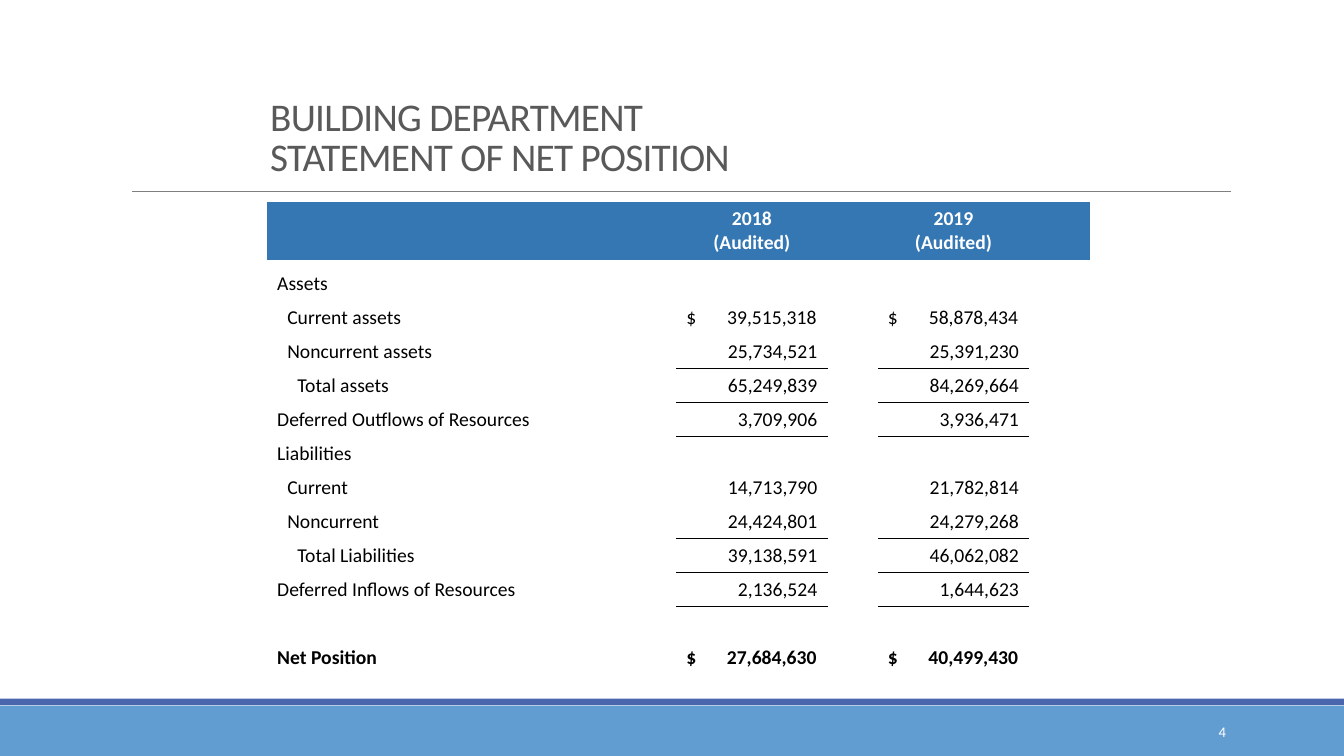
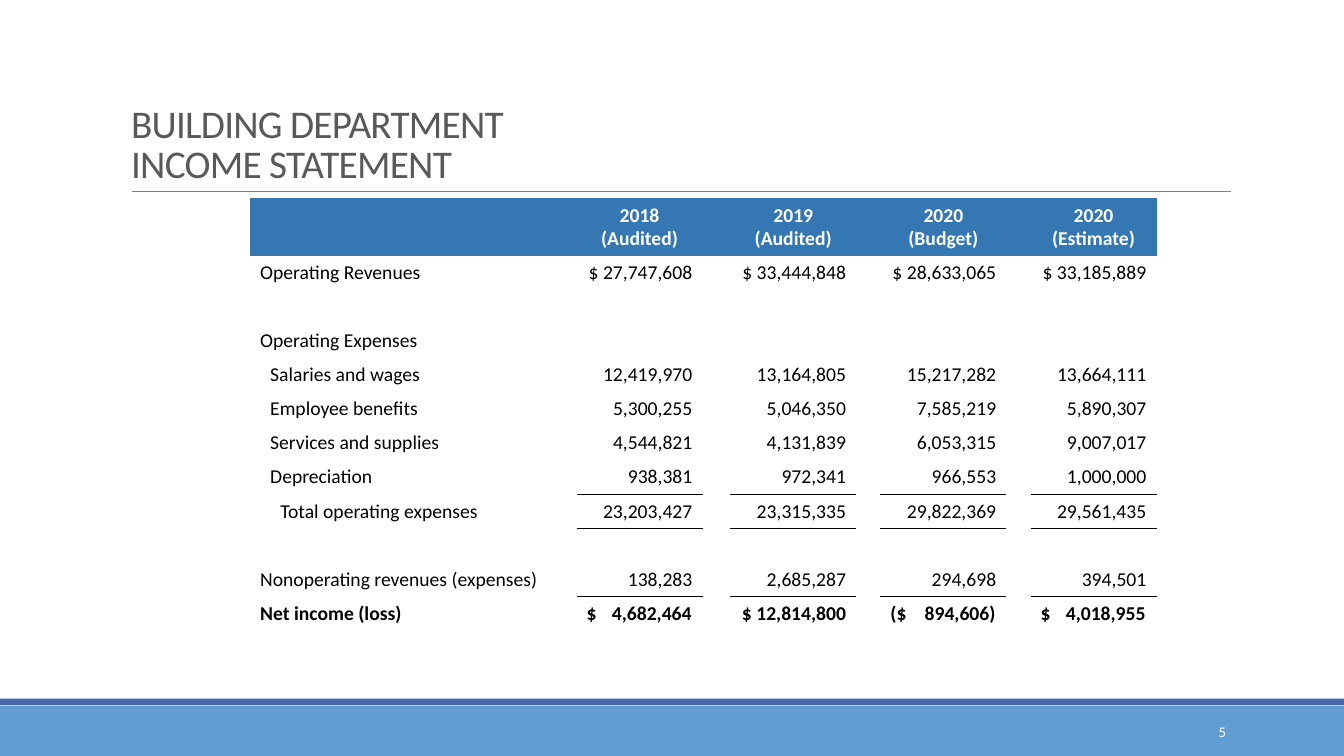
from lxml import etree
from pptx import Presentation
from pptx.dml.color import RGBColor
from pptx.enum import shapes, text
from pptx.oxml.ns import qn
from pptx.util import Pt

FONT = "Calibri"
HEAD, BLUE, STRIPE = "3477B2", "629DD1", "4A66AC"
GREY, RULE, BLACK, WHITE = "595959", "808080", "000000", "FFFFFF"
WIDE, HIGH = 960, 540
PAD = 7.2          # side margin of a table cell, also one indent step
ROW, TOP = 24.3, 41.4
PLAIN = "{2D5ABB26-0587-4C30-8999-92F81FD0307C}"  # no style, no grid

# Rows: indent level, label, values, mark ("rule" below the values, "bold" or "")
BLANK = (0, "", (), "")
SLIDES = [
    dict(
        number="4",
        title="BUILDING DEPARTMENT\vSTATEMENT OF NET POSITION",
        place=(185.8, 72, 672, 59.8),
        corner=(190.8, 144),
        cols=(202.3, 18, 72, 108, 36, 108, 43.2),
        used=(3, 5),
        filled=7,
        first=29.3,
        heads=("2018\n(Audited)", "2019\n(Audited)"),
        rows=[
            (0, "Assets", (), ""),
            (1, "Current assets", ("$\t39,515,318", "$\t58,878,434"), ""),
            (1, "Noncurrent assets", ("25,734,521", "25,391,230"), "rule"),
            (2, "Total assets", ("65,249,839", "84,269,664"), "rule"),
            (0, "Deferred Outflows of Resources", ("3,709,906", "3,936,471"), "rule"),
            (0, "Liabilities", (), ""),
            (1, "Current", ("14,713,790", "21,782,814"), ""),
            (1, "Noncurrent", ("24,424,801", "24,279,268"), "rule"),
            (2, "Total Liabilities", ("39,138,591", "46,062,082"), "rule"),
            (0, "Deferred Inflows of Resources", ("2,136,524", "1,644,623"), "rule"),
            BLANK,
            (0, "Net Position", ("$\t27,684,630", "$\t40,499,430"), "bold"),
            BLANK,
        ],
    ),
    dict(
        number="5",
        title="BUILDING DEPARTMENT\vINCOME STATEMENT",
        place=(86.4, 22.3, 792, 114.5),
        corner=(178.6, 141.6),
        cols=(216, 16.8, 90, 19.8, 90, 17.1, 90, 17.1, 90, 19.2),
        used=(2, 4, 6, 8),
        filled=9,
        first=ROW,
        heads=("2018\n(Audited)", "2019\n(Audited)", "2020\n(Budget)", "2020\n(Estimate)"),
        rows=[
            (0, "Operating Revenues",
             ("$ 27,747,608", "$ 33,444,848", "$ 28,633,065", "$ 33,185,889"), ""),
            BLANK,
            (0, "Operating Expenses", (), ""),
            (1, "Salaries and wages",
             ("12,419,970", "13,164,805", "15,217,282", "13,664,111"), ""),
            (1, "Employee benefits",
             ("5,300,255", "5,046,350", "7,585,219", "5,890,307"), ""),
            (1, "Services and supplies",
             ("4,544,821", "4,131,839", "6,053,315", "9,007,017"), ""),
            (1, "Depreciation", ("938,381", "972,341", "966,553", "1,000,000"), "rule"),
            (2, "Total operating expenses",
             ("23,203,427", "23,315,335", "29,822,369", "29,561,435"), "rule"),
            BLANK,
            (0, "Nonoperating revenues (expenses)",
             ("138,283", "2,685,287", "294,698", "394,501"), "rule"),
            (0, "Net income (loss)",
             ("$\t4,682,464", "$ 12,814,800", "($\t894,606)", "$\t4,018,955"), "bold"),
        ],
    ),
]


def rgb(code):
    return RGBColor.from_string(code)


def style(para, size, color, bold=False):
    for run in para.runs:
        font = run.font
        font.name, font.size, font.bold = FONT, Pt(size), bold
        font.color.rgb = rgb(color)


def band(slide, top, height, color):
    bar = slide.shapes.add_shape(
        shapes.MSO_SHAPE.RECTANGLE, 0, Pt(top), Pt(WIDE), Pt(height))
    bar.shadow.inherit = False
    bar.fill.solid()
    bar.fill.fore_color.rgb = rgb(color)
    bar.line.fill.background()


def frame(slide, number):
    """Draw the bands, the line under the title and the page number."""
    band(slide, 504, 36, BLUE)
    band(slide, 499, 4.7, STRIPE)
    line = slide.shapes.add_connector(
        shapes.MSO_CONNECTOR.STRAIGHT, Pt(94.3), Pt(136.8), Pt(879.1), Pt(136.8))
    line.line.color.rgb = rgb(RULE)
    line.line.width = Pt(0.5)
    etree.SubElement(line._element.spPr, qn("a:effectLst"))
    box = slide.shapes.add_textbox(Pt(779.8), Pt(508.3), Pt(103), Pt(28.8)).text_frame
    box.word_wrap = True
    box.vertical_anchor = text.MSO_ANCHOR.MIDDLE
    box.text = number
    box.paragraphs[0].alignment = text.PP_ALIGN.RIGHT
    style(box.paragraphs[0], 10.5, WHITE)


def name(slide, words, place):
    title = slide.shapes.title
    title.left, title.top, title.width, title.height = map(Pt, place)
    body = title.text_frame
    body.text = words
    body.auto_size = text.MSO_AUTO_SIZE.NONE
    body.vertical_anchor = text.MSO_ANCHOR.BOTTOM
    para = body.paragraphs[0]
    para.alignment = text.PP_ALIGN.LEFT
    para.line_spacing = 0.85
    style(para, 28, GREY)
    for run in para.runs:
        run.font._element.set("spc", "-50")


def write(cell, words, align, color=BLACK, bold=False):
    cell.vertical_anchor = text.MSO_ANCHOR.BOTTOM
    cell.text_frame.text = words
    for para in cell.text_frame.paragraphs:
        para.alignment = align
        style(para, 14, color, bold)


def tab(cell, width):
    """Keep the currency sign left and set the figure on a right tab."""
    para = cell.text_frame.paragraphs[0]
    para.alignment = text.PP_ALIGN.LEFT
    stops = etree.SubElement(para._p.get_or_add_pPr(), qn("a:tabLst"))
    spot = Pt(width - 2 * PAD - 0.5)
    etree.SubElement(stops, qn("a:tab"), pos=str(spot), algn="r")


def rule(cell):
    """Draw a thin black bottom border."""
    line = etree.Element(qn("a:lnB"), w=str(Pt(1)))
    fill = etree.SubElement(line, qn("a:solidFill"))
    etree.SubElement(fill, qn("a:srgbClr"), val=BLACK)
    cell._tc.get_or_add_tcPr().insert(0, line)


def clear(table):
    """Strip the default style and keep empty cells as low as filled ones."""
    props = table._tbl.tblPr
    props.find(qn("a:tableStyleId")).text = PLAIN
    table.first_row = table.horz_banding = False
    for cell in table.iter_cells():
        cell.fill.background()
        para = cell.text_frame.paragraphs[0]
        etree.SubElement(para._p, qn("a:endParaRPr"), sz="1400")


def grid(slide, data):
    cols, rows, used = data["cols"], data["rows"], data["used"]
    highs = [TOP, data["first"]] + [ROW] * (len(rows) - 1)
    left, top = data["corner"]
    table = slide.shapes.add_table(
        len(highs), len(cols), Pt(left), Pt(top), Pt(sum(cols)), Pt(sum(highs))).table
    for col, width in zip(table.columns, cols):
        col.width = Pt(width)
    for row, high in zip(table.rows, highs):
        row.height = Pt(high)
    clear(table)

    for c in range(data["filled"]):
        fill = table.cell(0, c).fill
        fill.solid()
        fill.fore_color.rgb = rgb(HEAD)
    for c, head in zip(used, data["heads"]):
        write(table.cell(0, c), head, text.PP_ALIGN.CENTER, WHITE, True)

    for r, (level, label, values, mark) in enumerate(rows, 1):
        bold = mark == "bold"
        if label:
            cell = table.cell(r, 0)
            write(cell, label, text.PP_ALIGN.LEFT, bold=bold)
            para = cell.text_frame.paragraphs[0]
            para._p.get_or_add_pPr().set("marL", str(Pt(level * PAD)))
        for c, value in zip(used, values):
            cell = table.cell(r, c)
            write(cell, value, text.PP_ALIGN.RIGHT, bold=bold)
            if "\t" in value:
                tab(cell, cols[c])
            if mark == "rule":
                rule(cell)


def main():
    deck = Presentation()
    deck.slide_width, deck.slide_height = Pt(WIDE), Pt(HIGH)
    for data in SLIDES:
        slide = deck.slides.add_slide(deck.slide_layouts[5])
        frame(slide, data["number"])
        name(slide, data["title"], data["place"])
        grid(slide, data)
    deck.save("out.pptx")


if __name__ == "__main__":
    main()
